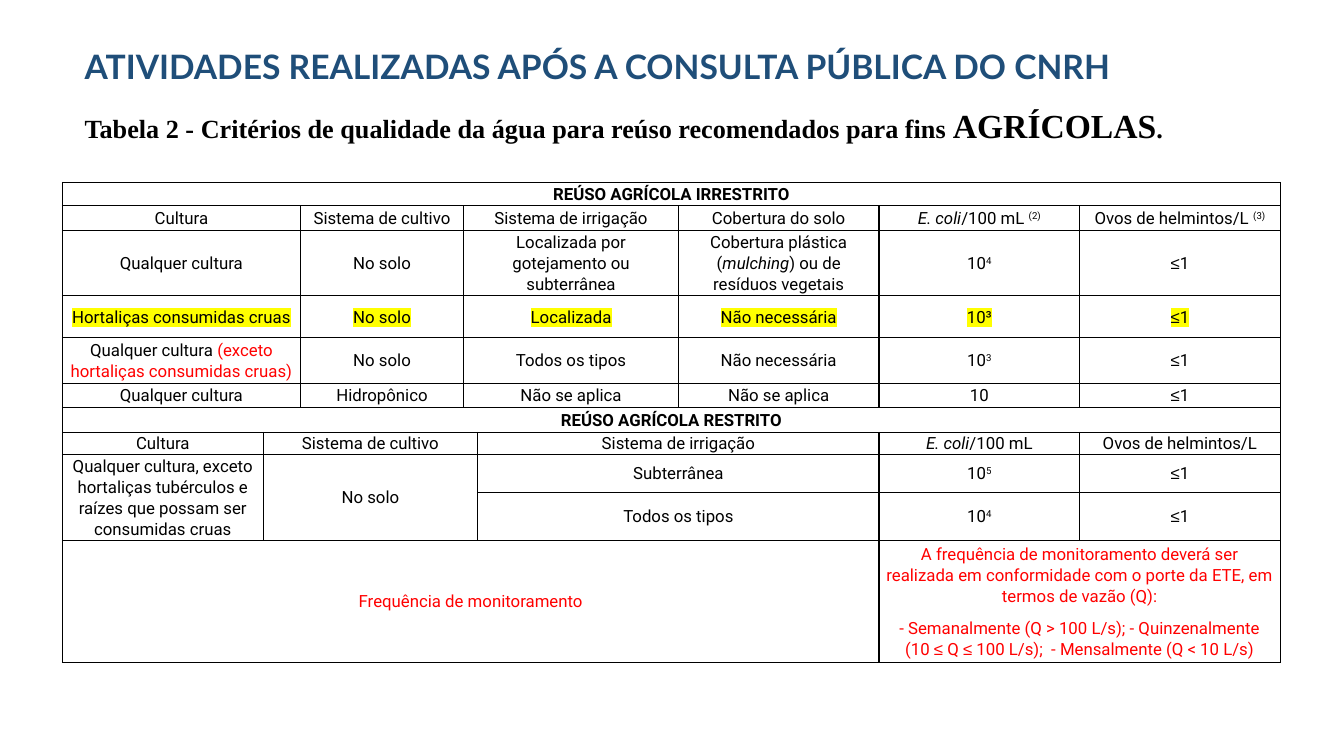
from dataclasses import dataclass, field
from itertools import groupby

from lxml.etree import SubElement
from pptx import Presentation
from pptx.dml.color import RGBColor
from pptx.enum.text import MSO_ANCHOR, MSO_AUTO_SIZE, PP_ALIGN
from pptx.oxml import parse_xml
from pptx.oxml.ns import nsdecls, qn
from pptx.util import Inches, Pt


@dataclass(frozen=True)
class Theme:
    title_font: str = "Lato"
    caption_font: str = "Times New Roman"
    table_font: str = "Roboto"
    symbol_font: str = "Arial"
    title_size: float = 24
    caption_size: float = 18.7
    emphasis_size: float = 24
    table_size: float = 12
    title_color: str = "1F4E79"
    text_color: str = "000000"
    alert_color: str = "FF0000"
    highlight: str = "FFFF00"


@dataclass(frozen=True)
class Span:
    text: str
    color: str = Theme.text_color
    bold: bool = False
    italic: bool = False
    raised: bool = False
    marked: bool = False


@dataclass(frozen=True)
class Cell:
    paragraphs: list[list[Span]] = field(default_factory=list)


@dataclass(frozen=True)
class Row:
    height: float
    widths: tuple[int, ...]  # grid columns taken by each cell
    cells: list[Cell | None]  # None continues the cell above


THEME = Theme()
COLUMNS = (1.99, 0.37, 1.62, 0.14, 1.99, 1.99, 1.99, 1.99)
FULL = (8,)
UNRESTRICTED = (2, 1, 2, 1, 1, 1)
RESTRICTED = (1, 3, 2, 1, 1)
MONITORING = (6, 2)


def cell(*spans: Span) -> Cell:
    return Cell([list(spans)])


def plain(*texts: str, **formats) -> list[Cell]:
    return [cell(Span(text, **formats)) for text in texts]


def power(exponent: str) -> Cell:
    return cell(Span("10"), Span(exponent, raised=True))


def alert(*texts: str) -> Cell:
    return Cell([[Span(text, color=THEME.alert_color)] for text in texts])


LIMIT = cell(Span("≤1"))
COLI = Span("E. coli", italic=True)
ROWS = [
    Row(0.23, FULL, plain("REÚSO AGRÍCOLA IRRESTRITO", bold=True)),
    Row(0.25, UNRESTRICTED, [
        *plain("Cultura", "Sistema de cultivo", "Sistema de irrigação", "Cobertura do solo"),
        cell(COLI, Span("/100 mL "), Span("(2)", raised=True)),
        cell(Span("Ovos de helmintos/L "), Span("(3)", raised=True))]),
    Row(0.63, UNRESTRICTED, [
        *plain("Qualquer cultura", "No solo", "Localizada por gotejamento ou subterrânea"),
        cell(Span("Cobertura plástica ("), Span("mulching", italic=True),
             Span(") ou de resíduos vegetais")),
        power("4"), LIMIT]),
    Row(0.42, UNRESTRICTED, plain(
        "Hortaliças consumidas cruas", "No solo", "Localizada", "Não necessária",
        "10³", "≤1", marked=True)),
    Row(0.45, UNRESTRICTED, [
        cell(Span("Qualquer cultura "),
             Span("(exceto hortaliças consumidas cruas)", color=THEME.alert_color)),
        *plain("No solo", "Todos os tipos", "Não necessária"), power("3"), LIMIT]),
    Row(0.24, UNRESTRICTED, plain(
        "Qualquer cultura", "Hidropônico", "Não se aplica", "Não se aplica", "10", "≤1")),
    Row(0.25, FULL, plain("REÚSO AGRÍCOLA RESTRITO", bold=True)),
    Row(0.2, RESTRICTED, [
        *plain("Cultura", "Sistema de cultivo", "Sistema de irrigação"),
        cell(COLI, Span("/100 mL")), *plain("Ovos de helmintos/L")]),
    Row(0.38, RESTRICTED, [
        *plain("Qualquer cultura, exceto hortaliças tubérculos e raízes que possam ser "
               "consumidas cruas", "No solo", "Subterrânea"), power("5"), LIMIT]),
    Row(0.46, RESTRICTED, [None, None, *plain("Todos os tipos"), power("4"), LIMIT]),
    Row(1.21, MONITORING, [
        alert("Frequência de monitoramento"),
        alert("A frequência de monitoramento deverá ser realizada em conformidade com o "
              "porte da ETE, em termos de vazão (Q):",
              "- Semanalmente (Q > 100 L/s); - Quinzenalmente (10 ≤ Q ≤ 100 L/s);  "
              "- Mensalmente (Q < 10 L/s)")]),
]


def apply(target, formats: dict) -> None:
    for name, value in formats.items():
        setattr(target, name, value)


def add_run(para, text: str, font: str, size: float, color: str, **formats):
    run = para.add_run()
    run.text = text
    apply(run.font, {"name": font, "size": Pt(size), **formats})
    run.font.color.rgb = RGBColor.from_string(color)
    return run


def add_span(para, span: Span) -> None:
    # The comparison sign has its own font
    for is_symbol, letters in groupby(span.text, lambda letter: letter == "≤"):
        font = THEME.symbol_font if is_symbol else THEME.table_font
        run = add_run(para, "".join(letters), font, THEME.table_size, span.color,
                      bold=span.bold, italic=span.italic)
        properties = run._r.get_or_add_rPr()
        if span.raised:
            properties.set("baseline", "30000")
        if span.marked:
            properties.find(qn("a:solidFill")).addnext(parse_xml(
                f'<a:highlight {nsdecls("a")}><a:srgbClr val="{THEME.highlight}"/></a:highlight>'))


def set_borders(table_cell) -> None:
    properties = table_cell._tc.get_or_add_tcPr()
    for position, side in enumerate(("lnL", "lnR", "lnT", "lnB")):
        line = SubElement(properties, qn(f"a:{side}"), w=str(Pt(1)))
        fill = SubElement(line, qn("a:solidFill"))
        SubElement(fill, qn("a:srgbClr"), val=THEME.text_color)
        properties.insert(position, line)


def fill_cell(table_cell, content: Cell) -> None:
    apply(table_cell, {"vertical_anchor": MSO_ANCHOR.MIDDLE,
                       "margin_left": Inches(0.07), "margin_right": Inches(0.07),
                       "margin_top": 0, "margin_bottom": 0})
    frame = table_cell.text_frame
    for index, spans in enumerate(content.paragraphs):
        para = frame.add_paragraph() if index else frame.paragraphs[0]
        apply(para, {"alignment": PP_ALIGN.CENTER, "line_spacing": 1.07,
                     "space_after": Pt(8)})
        for span in spans:
            add_span(para, span)


def add_criteria_table(page) -> None:
    table = page.shapes.add_table(len(ROWS), len(COLUMNS), Inches(0.62), Inches(1.81),
                                  Inches(sum(COLUMNS)),
                                  Inches(sum(row.height for row in ROWS))).table
    apply(table, {"first_row": False, "horz_banding": False})
    for column, width in zip(table.columns, COLUMNS):
        column.width = Inches(width)
    for table_cell in table.iter_cells():
        table_cell.fill.background()
        set_borders(table_cell)
    for top, row in enumerate(ROWS):
        table.rows[top].height = Inches(row.height)
        left = 0
        for index, (width, content) in enumerate(zip(row.widths, row.cells)):
            if content is not None:
                bottom = top
                while bottom + 1 < len(ROWS) and ROWS[bottom + 1].cells[index:index + 1] == [None]:
                    bottom += 1
                start = table.cell(top, left)
                if width > 1 or bottom > top:
                    start.merge(table.cell(bottom, left + width - 1))
                fill_cell(start, content)
            left += width


def add_title(page) -> None:
    box = page.shapes.title
    apply(box, {"left": Inches(0.74), "top": Inches(0.41),
                "width": Inches(10.95), "height": Inches(0.5)})
    apply(box.text_frame, {"word_wrap": True, "auto_size": MSO_AUTO_SIZE.NONE,
                           "vertical_anchor": MSO_ANCHOR.TOP})
    para = box.text_frame.paragraphs[0]
    para.alignment = PP_ALIGN.LEFT
    add_run(para, "ATIVIDADES REALIZADAS APÓS A CONSULTA PÚBLICA DO CNRH",
            THEME.title_font, THEME.title_size, THEME.title_color, bold=True)


def add_caption(page) -> None:
    box = page.shapes.add_textbox(Inches(0.74), Inches(0.96), Inches(12.59), Inches(0.5))
    box.text_frame.word_wrap = True
    para = box.text_frame.paragraphs[0]
    apply(para, {"alignment": PP_ALIGN.JUSTIFY, "line_spacing": 1.07, "space_after": Pt(10.7)})
    for text, size in (
            ("Tabela 2 - Critérios de qualidade da água para reúso recomendados para fins ",
             THEME.caption_size),
            ("AGRÍCOLAS", THEME.emphasis_size), (".", THEME.caption_size)):
        add_run(para, text, THEME.caption_font, size, THEME.text_color, bold=True)


def main() -> None:
    deck = Presentation()
    apply(deck, {"slide_width": Inches(13.33), "slide_height": Inches(7.5)})
    page = deck.slides.add_slide(deck.slide_layouts[5])
    add_title(page)
    add_caption(page)
    add_criteria_table(page)
    deck.save("out.pptx")


if __name__ == "__main__":
    main()
